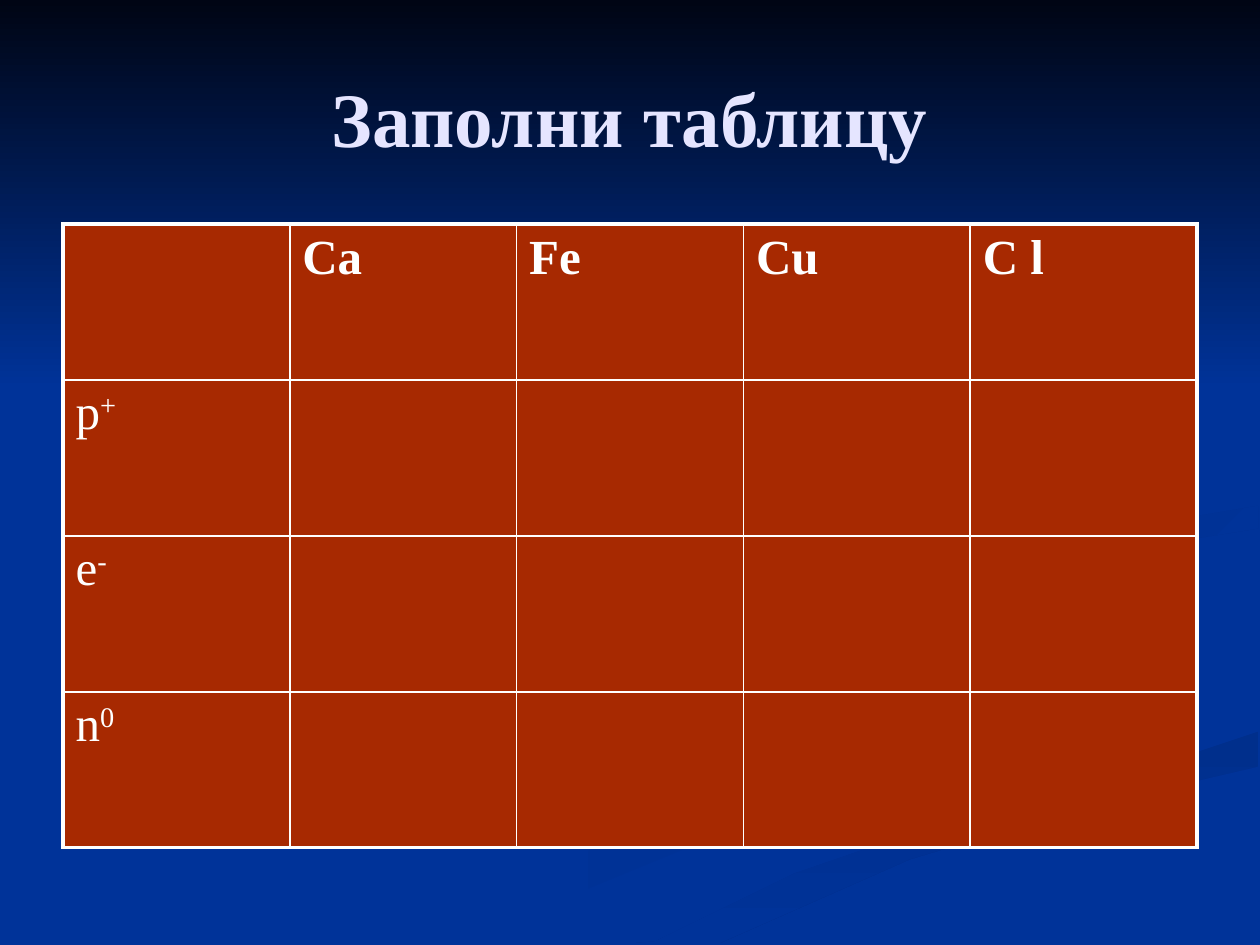
from dataclasses import dataclass

from lxml import etree
from pptx import Presentation
from pptx.dml.color import RGBColor
from pptx.enum.shapes import MSO_SHAPE
from pptx.enum.text import MSO_ANCHOR, PP_ALIGN
from pptx.oxml.ns import qn
from pptx.util import Pt

RECTANGLE = MSO_SHAPE.RECTANGLE
MIDDLE = MSO_ANCHOR.MIDDLE
LEFT, CENTER = PP_ALIGN.LEFT, PP_ALIGN.CENTER

BLUE = RGBColor(0x00, 0x33, 0x99)
SHADE = RGBColor(0x00, 0x31, 0x93)
DEEP = RGBColor(0x00, 0x2F, 0x8C)
NIGHT = RGBColor(0x00, 0x05, 0x14)
LAVENDER = RGBColor(0xE5, 0xE5, 0xFF)
WHITE = RGBColor(0xFF, 0xFF, 0xFF)
RUST = RGBColor(0xA7, 0x29, 0x01)
FONT = "Times New Roman"
OUTER, INNER = Pt(2.25), Pt(1)


@dataclass(frozen=True)
class Ribbon:
    points: list[tuple[int, int]]
    start: RGBColor = BLUE
    end: RGBColor = BLUE
    angle: int = 0


@dataclass(frozen=True)
class Label:
    text: str
    sup: str = ""
    bold: bool = False


SWEEP_EDGE = [(374, 538), (454, 499), (550, 466), (674, 433), (719, 418)]

RIBBONS = [
    Ribbon([(562, 398), (451, 361), (414, 330), (427, 354), (566, 408),
            (514, 436), (359, 476), (216, 539), (260, 539), (406, 479),
            (576, 418)], end=SHADE),
    Ribbon([(679, 410), (639, 385), (536, 353), (521, 334), (552, 369),
            (661, 418), (644, 436)], end=SHADE, angle=45),
    Ribbon([(362, 539), (411, 539), (520, 491), (620, 461), (719, 438),
            *reversed(SWEEP_EDGE)], start=DEEP, angle=90),
    Ribbon([(522, 334), (558, 362), (662, 394), (677, 420), (562, 456),
            (446, 492), (343, 539), *SWEEP_EDGE, (719, 387), (611, 362),
            (562, 333), (623, 305), (719, 289), (719, 279), (582, 300)]),
    Ribbon([(562, 331), (595, 357), (580, 340), (632, 316), (719, 302),
            (719, 289), (623, 305)], start=SHADE, angle=45),
    Ribbon([(492, 310), (616, 282), (644, 248), (607, 198), (549, 168),
            (626, 215), (635, 255), (549, 287), (430, 315), (415, 333),
            (448, 360), (433, 328)], start=DEEP, angle=45),
]

SYMBOLS = ["Ca", "Fe", "Cu", "C l"]
PARTICLES = [("p", "+"), ("e", "-"), ("n", "0")]
LABELS = {(0, c): Label(t, bold=True) for c, t in enumerate(SYMBOLS, 1)}
LABELS |= {(r, 0): Label(t, sup) for r, (t, sup) in enumerate(PARTICLES, 1)}


def paint(sp, start: RGBColor, end: RGBColor, angle: int) -> None:
    sp.shadow.inherit = False
    sp.line.fill.background()
    if start == end:
        sp.fill.solid()
        sp.fill.fore_color.rgb = start
        return
    sp.fill.gradient()
    sp.fill.gradient_angle = (360 - angle) % 360
    for stop, color in zip(sp.fill.gradient_stops, (start, end)):
        stop.color.rgb = color


def draw_ribbon(s, ribbon: Ribbon) -> None:
    first, *rest = ribbon.points
    fb = s.shapes.build_freeform(*first, scale=Pt(1))
    fb.add_line_segments(rest, close=True)
    paint(fb.convert_to_shape(), ribbon.start, ribbon.end, ribbon.angle)


def write(p, text: str, *, size: float, color: RGBColor, bold: bool = False,
          align: PP_ALIGN = LEFT, raised: bool = False) -> None:
    p.alignment = align
    r = p.add_run()
    r.text = text
    r.font.name = FONT
    r.font.size = Pt(size)
    r.font.bold = bold
    r.font.color.rgb = color
    if raised:
        r._r.get_or_add_rPr().set("baseline", "30000")


def set_borders(cell, widths: dict[str, int]) -> None:
    tc_pr = cell._tc.get_or_add_tcPr()
    for side, width in widths.items():
        ln = etree.SubElement(tc_pr, qn(f"a:ln{side}"), w=str(width))
        fill = etree.SubElement(ln, qn("a:solidFill"))
        etree.SubElement(fill, qn("a:srgbClr"), val=str(WHITE))


def draw_table(s, rows: int, cols: int) -> None:
    table = s.shapes.add_table(rows, cols, Pt(36), Pt(128), Pt(648), Pt(356.4)).table
    table.first_row = table.horz_banding = False
    for row in range(rows):
        for col in range(cols):
            cell = table.cell(row, col)
            set_borders(cell, {
                "L": OUTER if col == 0 else INNER,
                "R": OUTER if col == cols - 1 else INNER,
                "T": OUTER if row == 0 else INNER,
                "B": OUTER if row == rows - 1 else INNER,
            })
            cell.fill.solid()
            cell.fill.fore_color.rgb = RUST
            label = LABELS.get((row, col))
            if label:
                p = cell.text_frame.paragraphs[0]
                write(p, label.text, size=28, color=WHITE, bold=label.bold)
                if label.sup:
                    write(p, label.sup, size=28, color=WHITE, raised=True)


def main() -> None:
    prs = Presentation()
    prs.slide_width, prs.slide_height = Pt(720), Pt(540)
    s = prs.slides.add_slide(prs.slide_layouts[6])
    s.background.fill.solid()
    s.background.fill.fore_color.rgb = BLUE

    for ribbon in RIBBONS:
        draw_ribbon(s, ribbon)
    sky = s.shapes.add_shape(RECTANGLE, Pt(0), Pt(0), Pt(720), Pt(222))
    paint(sky, NIGHT, BLUE, 90)

    tf = s.shapes.add_textbox(Pt(36), Pt(21.6), Pt(648), Pt(90)).text_frame
    tf.word_wrap = True
    tf.vertical_anchor = MIDDLE
    write(tf.paragraphs[0], "Заполни таблицу", size=44, color=LAVENDER,
          bold=True, align=CENTER)

    draw_table(s, len(PARTICLES) + 1, len(SYMBOLS) + 1)
    prs.save("out.pptx")


if __name__ == "__main__":
    main()
